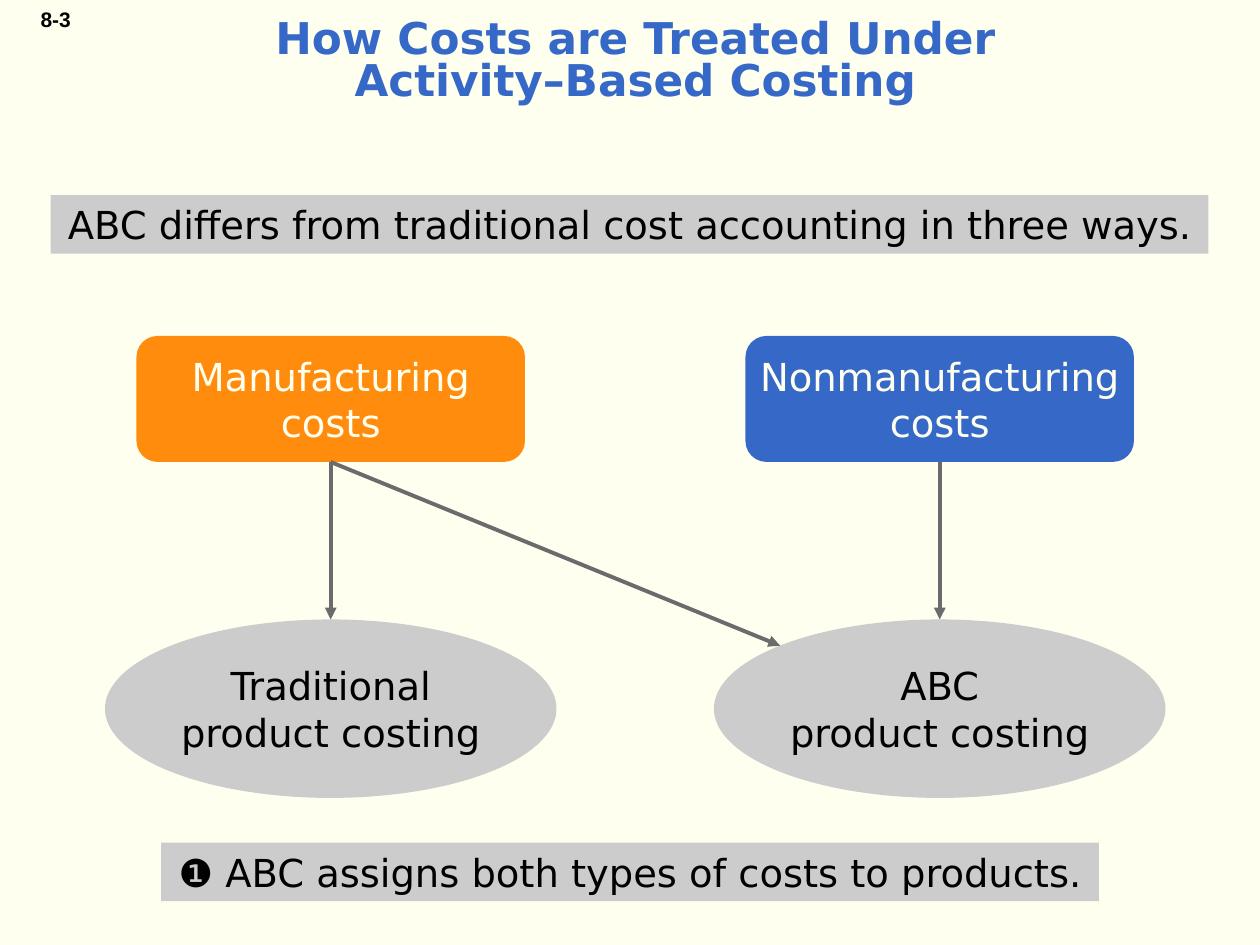
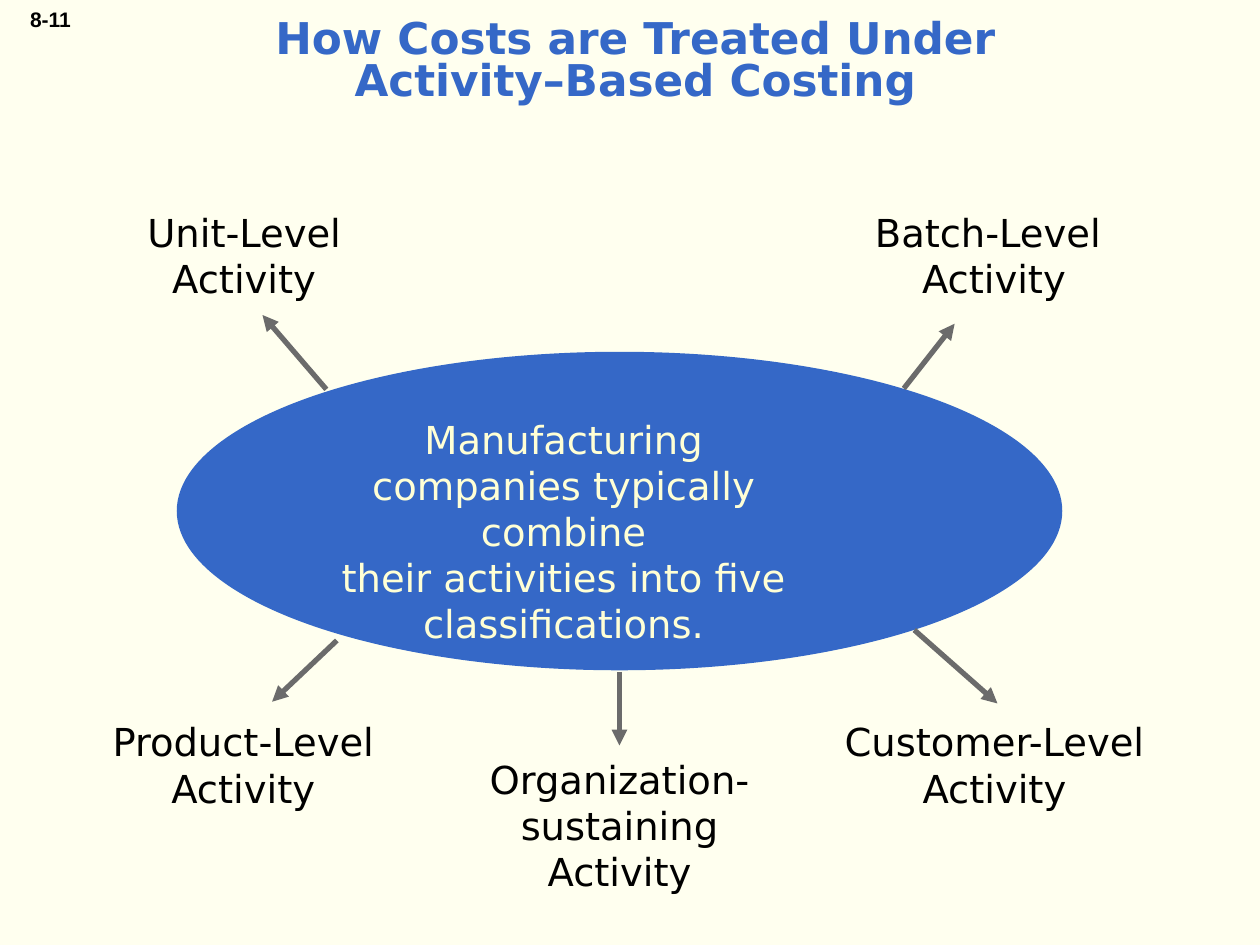
import pptx
import pptx.dml.color
import pptx.enum.shapes
import pptx.enum.text
import pptx.oxml
import pptx.oxml.ns
import pptx.util

Pt = pptx.util.Pt
RGBColor = pptx.dml.color.RGBColor
SHAPES = pptx.enum.shapes.MSO_SHAPE
ALIGN = pptx.enum.text.PP_ALIGN
ANCHOR = pptx.enum.text.MSO_ANCHOR

IVORY = RGBColor(0xFF, 0xFF, 0xEF)
CREAM = RGBColor(0xFF, 0xFF, 0xD5)
BLUE = RGBColor(0x35, 0x68, 0xC7)
ORANGE = RGBColor(0xFF, 0x8C, 0x0D)
SILVER = RGBColor(0xCC, 0xCC, 0xCC)
GRAY = RGBColor(0x6B, 0x6B, 0x6B)
BLACK = RGBColor(0, 0, 0)

BODY_FONT = "DejaVu Sans"
NUMBER_FONT = "Arial"
TITLE = "How Costs are Treated Under\vActivity–Based Costing"
COLUMN_STEP = 348


def write_text(shape, text, *, size=22, color=BLACK, font=BODY_FONT, bold=False,
               align=ALIGN.CENTER, anchor=ANCHOR.TOP, wrap=False, line_spacing=None):
    """Fill a shape with formatted text; newlines part paragraphs, \\v breaks lines."""
    frame = shape.text_frame
    frame.text = text
    frame.word_wrap = wrap
    frame.vertical_anchor = anchor
    for paragraph in frame.paragraphs:
        paragraph.alignment = align
        if line_spacing:
            paragraph.line_spacing = line_spacing
        for run in paragraph.runs:
            run.font.name = font
            run.font.size = Pt(size)
            run.font.bold = bold
            run.font.color.rgb = color


def add_text(slide, box, text, **text_format):
    """Add a text box at (left, top, width, height)."""
    shape = slide.shapes.add_textbox(*map(Pt, box))
    write_text(shape, text, **text_format)


def add_block(slide, kind, box, fill, text="", **text_format):
    """Add a filled shape without outline, with optional text."""
    shape = slide.shapes.add_shape(kind, *map(Pt, box))
    shape.shadow.inherit = False
    shape.fill.solid()
    shape.fill.fore_color.rgb = fill
    shape.line.fill.background()
    if text:
        write_text(shape, text, **text_format)
    return shape


def add_arrow(slide, start, end, width, source=None, target=None):
    """Add an arrow, joined to the source's bottom and the target's top if given."""
    connector = slide.shapes.add_connector(
        pptx.enum.shapes.MSO_CONNECTOR.STRAIGHT, *map(Pt, (*start, *end)))
    if source is not None:
        connector.begin_connect(source, 2)
    if target is not None:
        connector.end_connect(target, 0)
    connector.line.color.rgb = GRAY
    connector.line.width = Pt(width)
    line = connector.line._get_or_add_ln()
    head = pptx.oxml.ns.qn("a:tailEnd")
    line.append(line.makeelement(head, {"type": "triangle"}))
    properties = connector._element.spPr
    properties.append(properties.makeelement(pptx.oxml.ns.qn("a:effectLst"), {}))


def add_slide(presentation, number):
    """Add a blank slide with the shared background, number and title."""
    slide = presentation.slides.add_slide(presentation.slide_layouts[6])
    slide.background.fill.solid()
    slide.background.fill.fore_color.rgb = IVORY
    add_text(slide, (8, 0, 39.6, 21.6), number, size=12, font=NUMBER_FONT,
             bold=True, align=ALIGN.RIGHT)
    add_text(slide, (12, 6, 702, 60), TITLE, size=25, color=BLUE, bold=True,
             anchor=ANCHOR.MIDDLE, wrap=True, line_spacing=0.8)
    return slide


def build_cost_flow(presentation):
    """Show which costs each costing method assigns to products."""
    slide = add_slide(presentation, "8-3")
    add_block(slide, SHAPES.RECTANGLE, (29, 111.5, 661.5, 33.5), SILVER,
              "ABC differs from traditional cost accounting in three ways.")
    add_block(slide, SHAPES.RECTANGLE, (92, 481.5, 536, 33.5), SILVER,
              "❶ ABC assigns both types of costs to products.")
    columns = (("Manufacturing\vcosts", ORANGE, "Traditional\vproduct costing"),
               ("Nonmanufacturing\vcosts", BLUE, "ABC\vproduct costing"))
    costs, methods = [], []
    for index, (cost, fill, method) in enumerate(columns):
        shift = index * COLUMN_STEP
        costs.append(add_block(
            slide, SHAPES.ROUNDED_RECTANGLE, (78 + shift, 192, 222, 72), fill,
            cost, color=IVORY, anchor=ANCHOR.MIDDLE))
        methods.append(add_block(
            slide, SHAPES.OVAL, (60 + shift, 354, 258, 102), SILVER,
            method, anchor=ANCHOR.MIDDLE))
    for index, (cost, method) in enumerate(zip(costs, methods)):
        center = 189 + index * COLUMN_STEP
        add_arrow(slide, (center, 264), (center, 354), 2.25, cost, method)
    add_arrow(slide, (189, 264), (445.8, 369), 2.25, costs[0])


def build_activity_levels(presentation):
    """Show the five activity classifications around a central ellipse."""
    slide = add_slide(presentation, "8-11")
    add_block(slide, SHAPES.OVAL, (101, 201, 506, 182), BLUE)
    add_text(slide, (181.5, 234, 281, 140),
             "Manufacturing\vcompanies typically combine\v"
             "their activities into five\vclassifications.",
             color=CREAM, wrap=True)
    activities = (
        ("Unit-Level", (76, 116, 127, 60), (186.5, 222.5), (150, 180)),
        ("Batch-Level ", (492, 116, 152, 60), (516.5, 222), (545.5, 185)),
        ("Product-Level", (56, 407, 166, 60), (192.5, 366), (155.5, 401)),
        ("Customer-Level", (474, 407, 188.5, 60), (522.5, 360), (570, 402)),
        ("Organization-\vsustaining", (272, 428.5, 164, 86), (354, 384), (354, 426)),
    )
    for level, box, start, end in activities:
        add_text(slide, box, level + "\nActivity")
        add_arrow(slide, start, end, 3)


def main():
    """Build and save the presentation."""
    presentation = pptx.Presentation()
    presentation.slide_width = Pt(720)
    presentation.slide_height = Pt(540)
    build_cost_flow(presentation)
    build_activity_levels(presentation)
    presentation.save("out.pptx")


if __name__ == "__main__":
    main()
